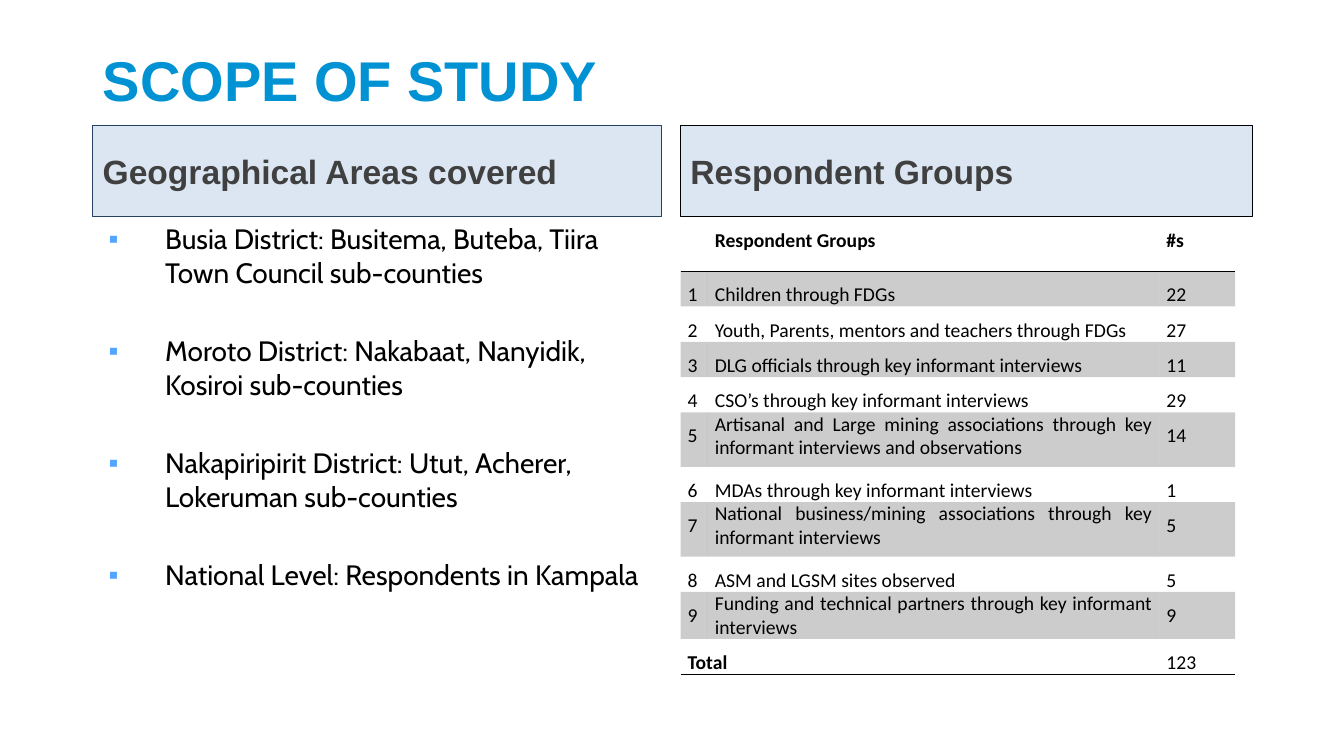
from dataclasses import dataclass
from typing import Any

from lxml import etree
from pptx import Presentation
from pptx import util as u
from pptx.dml.color import RGBColor
from pptx.enum import shapes, text
from pptx.oxml import ns

BLACK = RGBColor(0x00, 0x00, 0x00)
TITLE_BLUE = RGBColor(0x00, 0x92, 0xD2)
PALE_BLUE = RGBColor(0xDC, 0xE6, 0xF2)
NAVY = RGBColor(0x25, 0x40, 0x61)
GREY = RGBColor(0x40, 0x40, 0x40)
BULLET_BLUE = RGBColor(0x53, 0xA6, 0xFF)

LEFT, RIGHT = 0.92, 6.75
HEADING_TOP, CONTENT_TOP = 1.25, 2.15
NO_GRID_STYLE = "{2D5ABB26-0587-4C30-8999-92F81FD0307C}"


@dataclass(frozen=True)
class Heading:
    words: str
    left: float
    width: float
    outline: RGBColor


@dataclass(frozen=True)
class Group:
    name: str
    count: int
    height: float = 0.26
    spacing: float = 1.5


HEADINGS = (
    Heading("Geographical Areas covered", LEFT, 5.64, NAVY),
    Heading("Respondent Groups", RIGHT, 5.67, BLACK),
)
AREAS = (
    "Busia District: Busitema, Buteba, Tiira Town Council sub-counties",
    "Moroto District: Nakabaat, Nanyidik, Kosiroi sub-counties",
    "Nakapiripirit District: Utut, Acherer, Lokeruman sub-counties",
    "National Level: Respondents in Kampala",
)
GROUPS = (
    Group("Children through FDGs", 22),
    Group("Youth, Parents, mentors and teachers through FDGs", 27),
    Group("DLG officials through key informant interviews", 11),
    Group("CSO’s through key informant interviews", 29),
    Group("Artisanal and Large mining associations through key informant "
          "interviews and observations", 14, 0.54, 1.0),
    Group("MDAs through key informant interviews", 1),
    Group("National business/mining associations through key informant "
          "interviews", 5, 0.54, 1.0),
    Group("ASM and LGSM sites observed", 5),
    Group("Funding and technical partners through key informant interviews",
          9, spacing=1.0),
)
COLUMN_WIDTHS = (0.27, 4.48, 0.75)

TITLE_FONT = dict(name="Arial", size=u.Pt(40), bold=True)
HEADING_FONT = dict(name="Arial", size=u.Pt(24), bold=True)
AREA_FONT = dict(name="Cabin", size=u.Pt(20), bold=False)
CELL_FONT = dict(name="Calibri", size=u.Pt(14))
CELL_MARGINS = dict(margin_left=u.Inches(0.07), margin_right=u.Inches(0.07),
                    margin_top=0, margin_bottom=0)


def apply(target: Any, values: dict[str, Any]) -> None:
    for key, value in values.items():
        setattr(target, key, value)


def write(paragraph: Any, words: str, font: dict[str, Any], color: RGBColor) -> None:
    paragraph.add_run().text = words
    apply(paragraph.runs[0].font, font)
    paragraph.runs[0].font.color.rgb = color


def child(parent: Any, tag: str, **attributes: str) -> Any:
    return etree.SubElement(parent, ns.qn(tag), attributes)


def add_title(slide: Any) -> None:
    title = slide.shapes.title
    apply(title, dict(left=u.Inches(LEFT), top=u.Inches(0.4),
                      width=u.Inches(11.5), height=u.Inches(1.45)))
    apply(title.text_frame, dict(vertical_anchor=text.MSO_ANCHOR.TOP, word_wrap=True))
    paragraph = title.text_frame.paragraphs[0]
    paragraph.alignment = text.PP_ALIGN.LEFT
    write(paragraph, "SCOPE OF STUDY", TITLE_FONT, TITLE_BLUE)


def add_heading(slide: Any, heading: Heading) -> None:
    band = slide.shapes.add_shape(
        shapes.MSO_SHAPE.RECTANGLE, u.Inches(heading.left), u.Inches(HEADING_TOP),
        u.Inches(heading.width), u.Inches(CONTENT_TOP - HEADING_TOP))
    band.shadow.inherit = False
    band.fill.solid()
    band.fill.fore_color.rgb = PALE_BLUE
    band.line.color.rgb = heading.outline
    band.line.width = u.Pt(0.75)
    apply(band.text_frame, dict(vertical_anchor=text.MSO_ANCHOR.MIDDLE, word_wrap=True))
    paragraph = band.text_frame.paragraphs[0]
    paragraph.alignment = text.PP_ALIGN.LEFT
    write(paragraph, heading.words, HEADING_FONT, GREY)


def add_areas(slide: Any) -> None:
    frame = slide.shapes.add_textbox(
        u.Inches(LEFT), u.Inches(CONTENT_TOP), u.Inches(5.64), u.Inches(4.85)).text_frame
    frame.word_wrap = True
    for index, area in enumerate(AREAS):
        paragraph = frame.paragraphs[0] if index == 0 else frame.add_paragraph()
        if index:
            paragraph.space_before = u.Pt(32)
        properties = paragraph._p.get_or_add_pPr()
        properties.set("marL", str(u.Inches(0.62)))
        properties.set("indent", str(u.Inches(-0.56)))
        child(child(properties, "a:buClr"), "a:srgbClr", val=str(BULLET_BLUE))
        child(properties, "a:buFont", typeface="Arial")
        child(properties, "a:buChar", char="▪")
        write(paragraph, area, AREA_FONT, BLACK)


def fill_cell(cell: Any, words: str, bold: bool, spacing: float,
              edges: str, shaded: bool) -> None:
    apply(cell, CELL_MARGINS)
    paragraph = cell.text_frame.paragraphs[0]
    apply(paragraph, dict(alignment=text.PP_ALIGN.JUSTIFY, line_spacing=spacing))
    if words:
        write(paragraph, words, CELL_FONT | dict(bold=bold), BLACK)
    properties = cell._tc.get_or_add_tcPr()
    for edge in edges:
        line = child(properties, f"a:ln{edge}", w=str(u.Pt(1)))
        child(child(line, "a:solidFill"), "a:srgbClr", val=str(BLACK))
    if shaded:
        cell.fill.solid()
        cell.fill.fore_color.rgb = BLACK
        color = properties.find(".//" + ns.qn("a:srgbClr"))
        child(color, "a:alpha", val="20000")
    else:
        cell.fill.background()


def add_groups(slide: Any) -> None:
    heights = (0.54, *(group.height for group in GROUPS), 0.26)
    table = slide.shapes.add_table(
        len(heights), len(COLUMN_WIDTHS), u.Inches(RIGHT), u.Inches(CONTENT_TOP),
        u.Inches(sum(COLUMN_WIDTHS)), u.Inches(sum(heights))).table
    apply(table, dict(first_row=False, horz_banding=False))
    table._tbl.tblPr.find(ns.qn("a:tableStyleId")).text = NO_GRID_STYLE
    for column, width in zip(table.columns, COLUMN_WIDTHS):
        column.width = u.Inches(width)
    for row, height in zip(table.rows, heights):
        row.height = u.Inches(height)

    last = len(heights) - 1
    table.cell(last, 0).merge(table.cell(last, 1))
    for column, words in enumerate(("", "Respondent Groups", "#s")):
        fill_cell(table.cell(0, column), words, True, 1.5, "TB", False)
    for number, group in enumerate(GROUPS, 1):
        for column, words in enumerate((str(number), group.name, str(group.count))):
            spacing = group.spacing if column == 1 else 1.5
            fill_cell(table.cell(number, column), words, False, spacing, "",
                      number % 2 == 1)
    total = str(sum(group.count for group in GROUPS))
    for column, words in enumerate(("Total", "", total)):
        fill_cell(table.cell(last, column), words, column == 0, 1.5, "B", False)


def main() -> None:
    deck = Presentation()
    apply(deck, dict(slide_width=u.Inches(13.33), slide_height=u.Inches(7.5)))
    slide = deck.slides.add_slide(deck.slide_layouts.get_by_name("Title Only"))
    add_title(slide)
    for heading in HEADINGS:
        add_heading(slide, heading)
    add_areas(slide)
    add_groups(slide)
    deck.save("out.pptx")


if __name__ == "__main__":
    main()
